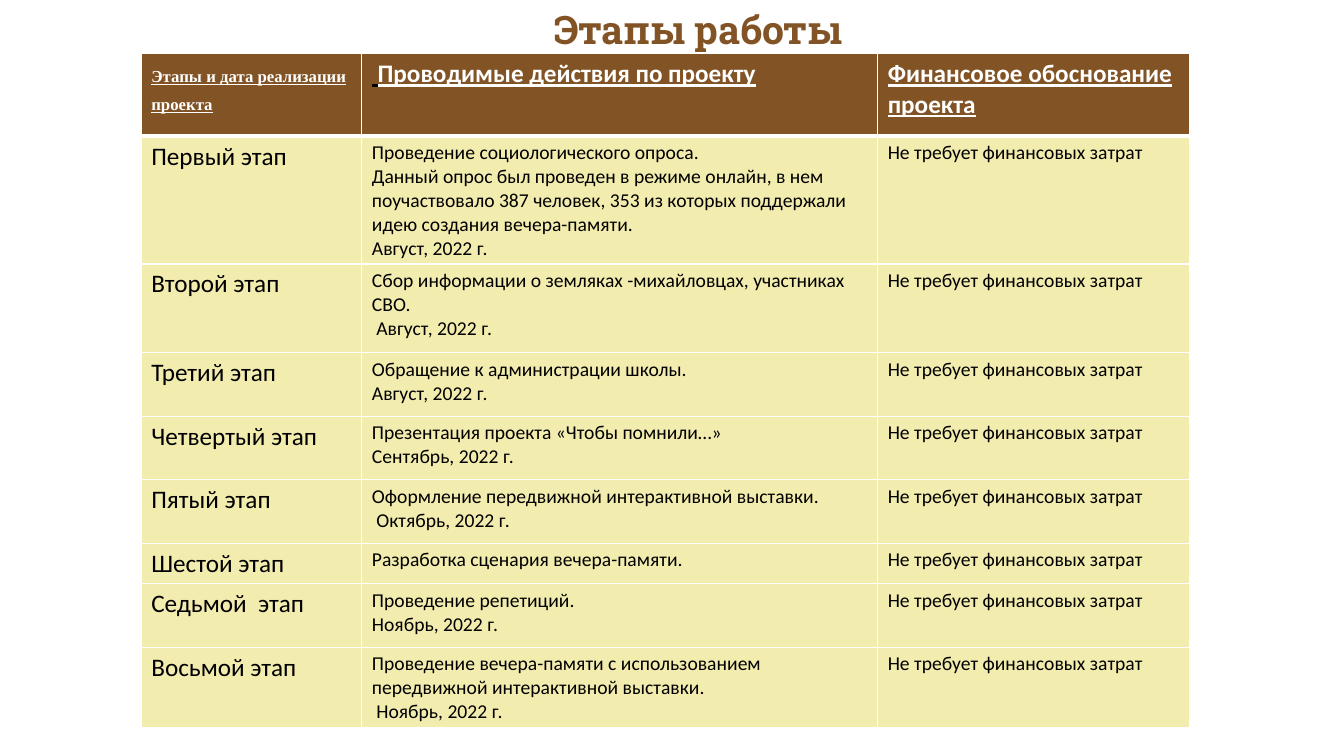
"""Build the slide with the table of project stages."""
from dataclasses import dataclass

from lxml import etree
from pptx import Presentation
from pptx import util as u
from pptx.dml import color
from pptx.enum import text
from pptx.oxml import ns

HUES = {"brown": "815325", "cream": "F3ECAF", "white": "FFFFFF", "black": "000000"}
COST = "Не требует финансовых затрат"
COLS = (5.56, 13.0, 7.85)
HEAD = 2.08


@dataclass(frozen=True)
class Stage:
    name: str
    acts: tuple[str, ...]
    tall: float = 1.6


STAGES = (
    Stage("Первый этап", (
        "Проведение социологического опроса.",
        "Данный опрос был проведен в режиме онлайн, в нем поучаствовало 387 человек, "
        "353 из которых поддержали идею создания вечера-памяти.",
        "Август, 2022 г."), 3.12),
    Stage("Второй этап", (
        "Сбор информации о земляках -михайловцах, участниках СВО.",
        " Август, 2022 г."), 2.24),
    Stage("Третий этап", ("Обращение к администрации школы.", "Август, 2022 г.")),
    Stage("Четвертый этап", ("Презентация проекта «Чтобы помнили…»", "Сентябрь, 2022 г.")),
    Stage("Пятый этап", (
        "Оформление передвижной интерактивной выставки.", " Октябрь, 2022 г.")),
    Stage("Шестой этап", ("Разработка сценария вечера-памяти.",), 0.86),
    Stage("Седьмой  этап", ("Проведение репетиций.", "Ноябрь, 2022 г.")),
    Stage("Восьмой этап", (
        "Проведение вечера-памяти с использованием передвижной интерактивной выставки.",
        " Ноябрь, 2022 г."), 1.85),
)


def write(par, words: str, *, size: int = 14, face: str = "Calibri",
          hue: str = "black", bold: bool = False, under: bool = False) -> None:
    run = par.add_run()
    run.text = words
    font = run.font
    font.size, font.name = u.Pt(size), face
    font.bold, font.underline = bold, under
    font.color.rgb = color.RGBColor.from_string(HUES[hue])


def paint(cell, hue: str, top: int = 1, base: int = 1) -> None:
    prop = cell._tc.get_or_add_tcPr()
    for side, wide in (("L", 1), ("R", 1), ("T", top), ("B", base)):
        line = etree.SubElement(prop, ns.qn(f"a:ln{side}"), w=str(u.Pt(wide)))
        fill = etree.SubElement(line, ns.qn("a:solidFill"))
        etree.SubElement(fill, ns.qn("a:srgbClr"), val=HUES["white"])
    cell.fill.solid()
    cell.fill.fore_color.rgb = color.RGBColor.from_string(HUES[hue])


def fill_head(cells) -> None:
    for cell in cells:
        paint(cell, "brown", base=3)
    date, acts, cost = (cell.text_frame.paragraphs[0] for cell in cells)
    look = {"hue": "white", "bold": True, "under": True}
    date.line_spacing = 1.5
    write(date, "Этапы и дата реализации проекта", size=12, face="Times New Roman", **look)
    write(acts, " ", size=18, bold=True, under=True)
    write(acts, "Проводимые действия по проекту", size=18, **look)
    write(cost, "Финансовое обоснование проекта", size=18, **look)


def fill_row(cells, stage: Stage, top: int) -> None:
    parts = (((stage.name,), 18), (stage.acts, 14), ((COST,), 14))
    for cell, (lines, size) in zip(cells, parts):
        paint(cell, "cream", top=top)
        frame = cell.text_frame
        for idx, line in enumerate(lines):
            par = frame.add_paragraph() if idx else frame.paragraphs[0]
            write(par, line, size=size)


def add_title(slide) -> None:
    box = slide.shapes.add_textbox(u.Cm(10.59), u.Cm(0), u.Cm(14.02), u.Cm(1.45))
    frame = box.text_frame
    frame.word_wrap = True
    frame.auto_size = text.MSO_AUTO_SIZE.SHAPE_TO_FIT_TEXT
    par = frame.paragraphs[0]
    par.alignment = text.PP_ALIGN.CENTER
    write(par, "Этапы работы", size=28, face="Roboto Slab", hue="brown", bold=True)


def add_grid(slide) -> None:
    talls = (HEAD, *(stage.tall for stage in STAGES))
    grid = slide.shapes.add_table(
        len(talls), len(COLS), u.Cm(3.56), u.Cm(1.35),
        u.Cm(sum(COLS)), u.Cm(sum(talls))).table
    grid.horz_banding = False
    for col, wide in zip(grid.columns, COLS):
        col.width = u.Cm(wide)
    for row, tall in zip(grid.rows, talls):
        row.height = u.Cm(tall)
    head, *rows = grid.rows
    fill_head(head.cells)
    for idx, (row, stage) in enumerate(zip(rows, STAGES)):
        fill_row(row.cells, stage, top=1 if idx else 3)


def main() -> None:
    deck = Presentation()
    deck.slide_width, deck.slide_height = u.Cm(33.87), u.Cm(19.05)
    slide = deck.slides.add_slide(deck.slide_layouts[6])
    add_title(slide)
    add_grid(slide)
    deck.save("out.pptx")


if __name__ == "__main__":
    main()
